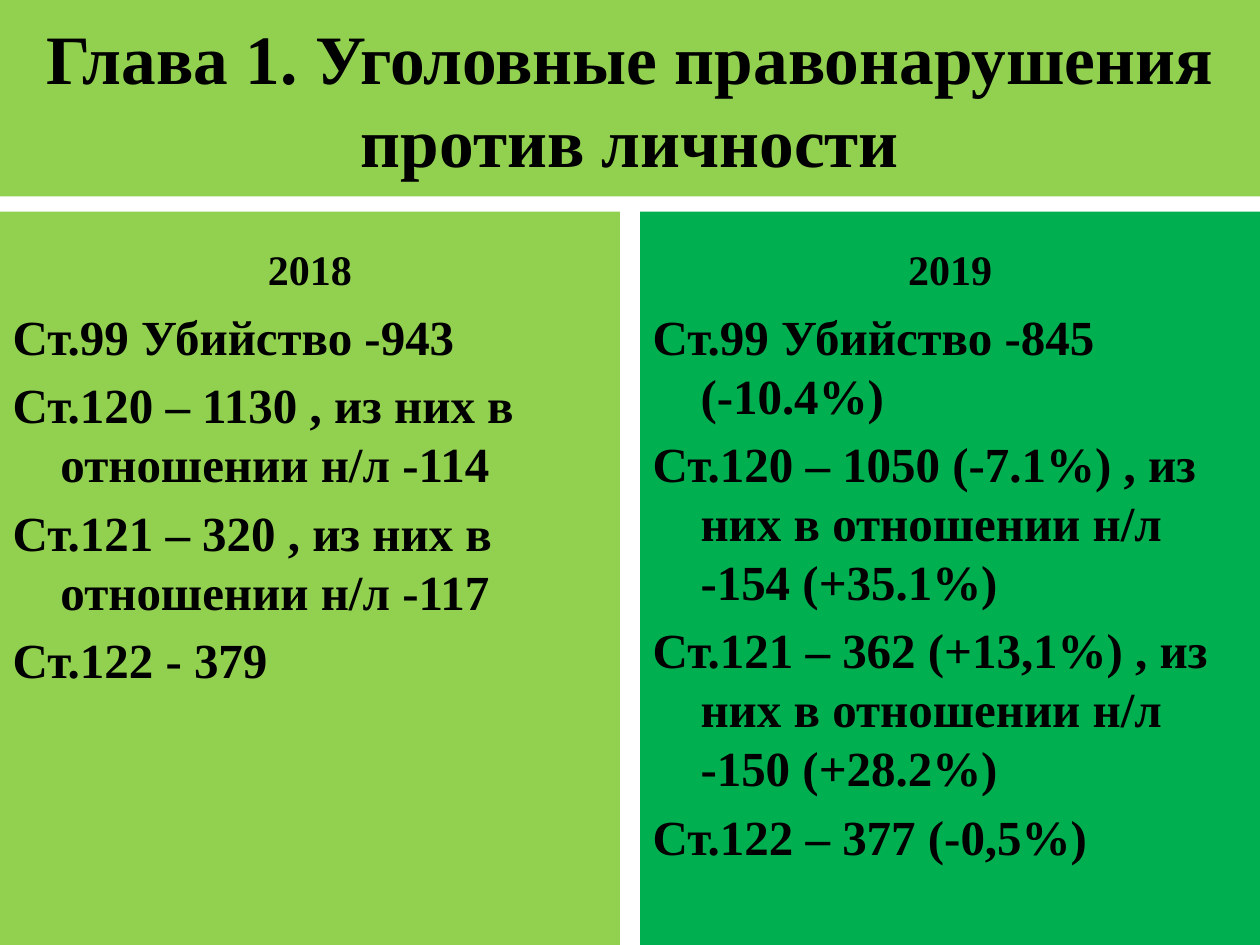
"""Build the slide comparing offences against the person in 2018 and 2019."""
from dataclasses import dataclass

from lxml.etree import SubElement
from pptx import Presentation
from pptx.dml.color import RGBColor
from pptx.enum.text import MSO_ANCHOR as Anchor, MSO_AUTO_SIZE as AutoSize, PP_ALIGN as Align
from pptx.oxml.ns import qn
from pptx.util import Inches, Pt

BLACK = RGBColor(0x00, 0x00, 0x00)
LIME = RGBColor(0x92, 0xD0, 0x50)
GREEN = RGBColor(0x00, 0xB0, 0x50)
FONT = "Times New Roman"
SLIDE_W, SLIDE_H = 10, 7.5
COLUMN_W = 4.92
HEAD_TOP, HEAD_H = 1.68, 0.7
LIST_TOP = HEAD_TOP + HEAD_H
HANGING = 0.38


@dataclass
class YearColumn:
    year: str
    left: float
    color: RGBColor
    head_idx: int
    list_idx: int
    items: list[str]


COLUMNS = [
    YearColumn("2018", 0, LIME, 1, 2, [
        "Ст.99 Убийство -943",
        "Ст.120 – 1130 , из них в отношении н/л -114",
        "Ст.121 – 320 , из них в отношении н/л -117",
        "Ст.122 - 379",
    ]),
    YearColumn("2019", SLIDE_W - COLUMN_W, GREEN, 3, 4, [
        "Ст.99 Убийство -845 (-10.4%)",
        "Ст.120 – 1050 (-7.1%) , из них в отношении н/л -154 (+35.1%)",
        "Ст.121 – 362 (+13,1%) , из них в отношении н/л -150 (+28.2%)",
        "Ст.122 – 377 (-0,5%)",
    ]),
]


def place(sp, left: float, top: float, width: float, height: float, color: RGBColor) -> None:
    """Move a placeholder and fill it."""
    sp.left, sp.top = Inches(left), Inches(top)
    sp.width, sp.height = Inches(width), Inches(height)
    sp.fill.solid()
    sp.fill.fore_color.rgb = color


def write(sp, lines: list[str], *, size: float, anchor: Anchor,
          align: Align = Align.CENTER, hanging: float = 0) -> None:
    """Write bold paragraphs into a placeholder."""
    tf = sp.text_frame
    tf.word_wrap = True
    tf.auto_size = AutoSize.NONE
    tf.vertical_anchor = anchor
    for i, line in enumerate(lines):
        p = tf.add_paragraph() if i else tf.paragraphs[0]
        p.alignment = align
        if hanging:
            pPr = p._p.get_or_add_pPr()
            pPr.set("marL", str(Inches(hanging)))
            pPr.set("indent", str(-Inches(hanging)))
            SubElement(pPr, qn("a:buNone"))
        r = p.add_run()
        r.text = line
        r.font.name, r.font.size, r.font.bold = FONT, Pt(size), True
        r.font.color.rgb = BLACK


def draw_column(s, column: YearColumn) -> None:
    """Draw the year heading and its list."""
    holders = {sp.placeholder_format.idx: sp for sp in s.placeholders}
    head, body = holders[column.head_idx], holders[column.list_idx]
    place(head, column.left, HEAD_TOP, COLUMN_W, HEAD_H, column.color)
    write(head, [column.year], size=24, anchor=Anchor.BOTTOM)
    place(body, column.left, LIST_TOP, COLUMN_W, SLIDE_H - LIST_TOP, column.color)
    write(body, column.items, size=28, anchor=Anchor.TOP, align=Align.LEFT, hanging=HANGING)


def main() -> None:
    """Build and save the presentation."""
    prs = Presentation()
    prs.slide_width, prs.slide_height = Inches(SLIDE_W), Inches(SLIDE_H)
    s = prs.slides.add_slide(prs.slide_layouts.get_by_name("Comparison"))
    title = s.shapes.title
    place(title, 0, 0, SLIDE_W, 1.56, LIME)
    write(title, ["Глава 1. Уголовные правонарушения против личности"],
          size=39.6, anchor=Anchor.MIDDLE)
    for column in COLUMNS:
        draw_column(s, column)
    prs.save("out.pptx")


if __name__ == "__main__":
    main()
